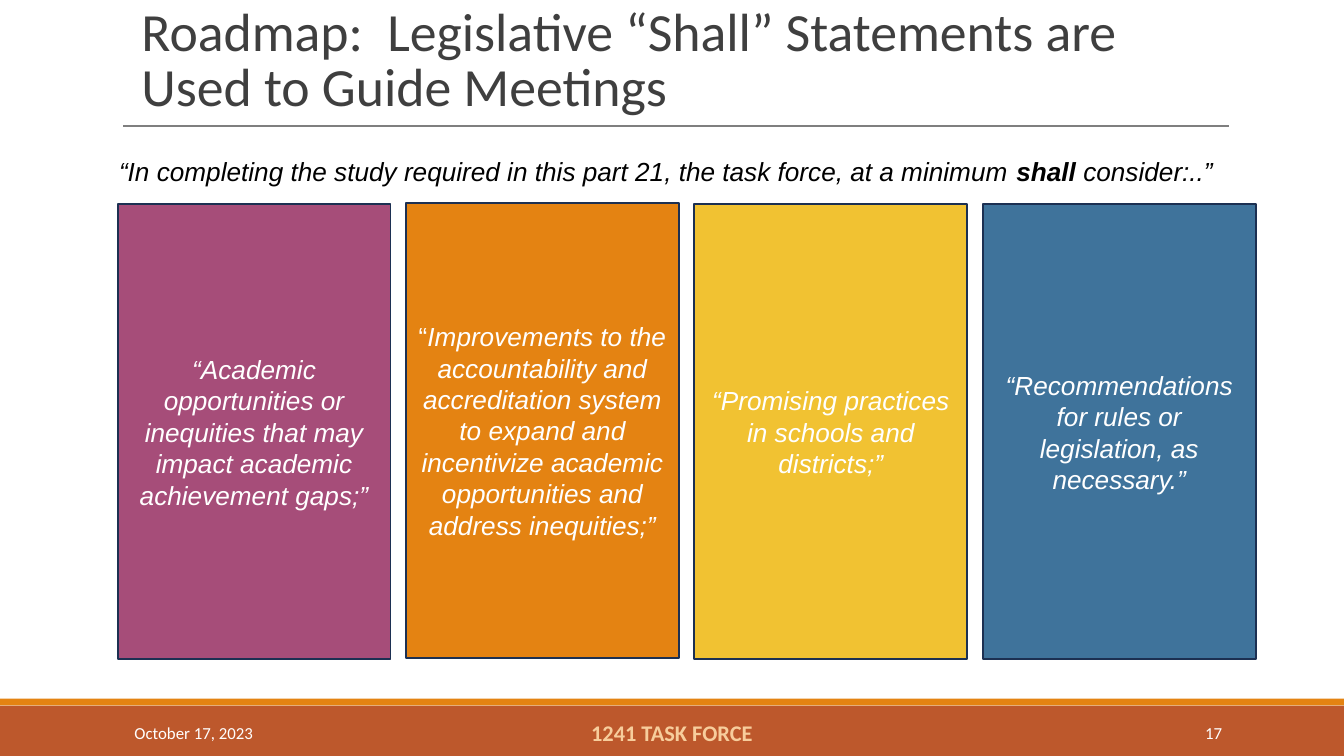
from lxml import etree
from pptx import Presentation
from pptx.dml.color import RGBColor
from pptx.enum.shapes import MSO_CONNECTOR, MSO_SHAPE
from pptx.enum.text import MSO_ANCHOR, MSO_AUTO_SIZE, PP_ALIGN
from pptx.oxml.ns import qn
from pptx.util import Emu, Pt

LEFT, CENTER, RIGHT = PP_ALIGN.LEFT, PP_ALIGN.CENTER, PP_ALIGN.RIGHT
TOP, MIDDLE, BOTTOM = MSO_ANCHOR.TOP, MSO_ANCHOR.MIDDLE, MSO_ANCHOR.BOTTOM
RECTANGLE = MSO_SHAPE.RECTANGLE
STRAIGHT = MSO_CONNECTOR.STRAIGHT
NO_AUTOFIT = MSO_AUTO_SIZE.NONE

WHITE = RGBColor(0xFF, 0xFF, 0xFF)
BLACK = RGBColor(0x00, 0x00, 0x00)
CHARCOAL = RGBColor(0x3F, 0x3F, 0x3F)
GRAY = RGBColor(0x7F, 0x7F, 0x7F)
NAVY = RGBColor(0x1C, 0x30, 0x52)
RUST = RGBColor(0xBD, 0x58, 0x2C)
ORANGE = RGBColor(0xE4, 0x83, 0x12)
PEACH = RGBColor(0xF7, 0xCD, 0x9C)
PLUM = RGBColor(0xA6, 0x4D, 0x79)
YELLOW = RGBColor(0xF1, 0xC2, 0x32)
BLUE = RGBColor(0x3F, 0x73, 0x9B)

PX = 9525  # EMU in one px, 96 px to the inch
SLIDE_WIDTH, SLIDE_HEIGHT = 960, 540
WIDE_INSETS = (10, 5)
NARROW_INSETS = (7, 4)

# Each card: fill, vertical nudge, spans of (text, italic)
CARDS = [
    (PLUM, 0, [("“Academic opportunities or inequities that may impact "
                "academic achievement gaps;”", True)]),
    (ORANGE, -1, [("“", False),
                  ("Improvements to the accountability and accreditation system "
                   "to expand and incentivize academic opportunities and "
                   "address inequities;”", True)]),
    (YELLOW, 0, [("“Promising practices in schools and districts;”", True)]),
    (BLUE, 0, [("“Recommendations for rules or legislation, as necessary.”", True)]),
]


def px(*lengths):
    return [Emu(length * PX) for length in lengths]


def write_text(shape, spans, font="Arial", size=14, color=BLACK, bold=False,
               italic=False, align=LEFT, anchor=TOP, insets=NARROW_INSETS,
               line_spacing=None):
    """Write one paragraph of (text, format overrides) spans into a shape."""
    frame = shape.text_frame
    frame.word_wrap = True
    frame.auto_size = NO_AUTOFIT
    frame.vertical_anchor = anchor
    frame.margin_left, frame.margin_top = px(*insets)
    frame.margin_right, frame.margin_bottom = px(*insets)
    para = frame.paragraphs[0]
    para.alignment = align
    if line_spacing:
        para.line_spacing = line_spacing
    for text, overrides in spans:
        span = para.add_run()
        span.text = text
        span.font.name = font
        span.font.size = Pt(size)
        span.font.color.rgb = color
        span.font.bold = overrides.get("bold", bold)
        span.font.italic = overrides.get("italic", italic)


def add_rectangle(page, box, fill, line=None):
    shape = page.shapes.add_shape(RECTANGLE, *px(*box))
    shape.shadow.inherit = False
    shape.fill.solid()
    shape.fill.fore_color.rgb = fill
    if line is None:
        shape.line.fill.background()
    else:
        shape.line.color.rgb = line
        shape.line.width = Pt(1)
    return shape


def add_heading(page, box):
    """Place the title, with a rule just below it."""
    left, top, width, height = box
    title = page.shapes.title
    title.left, title.top, title.width, title.height = px(*box)
    write_text(title, [("Roadmap:  Legislative “Shall” Statements are "
                        "Used to Guide Meetings", {})],
               font="Calibri", size=28.8, color=CHARCOAL, anchor=BOTTOM,
               insets=WIDE_INSETS, line_spacing=0.85)
    rule_y = top + height + 1
    rule = page.shapes.add_connector(
        STRAIGHT, *px(left - 3, rule_y, left + width - 5, rule_y))
    rule.line.color.rgb = GRAY
    rule.line.width = Pt(0.75)
    etree.SubElement(rule._element.spPr, qn("a:effectLst"))


def add_introduction(page, box):
    intro = page.shapes.add_textbox(*px(*box))
    write_text(intro, [
        ("“In completing the study required in this part 21, the task force, "
         "at a minimum ", {}),
        ("shall ", {"bold": True}),
        ("consider:..”", {}),
    ], italic=True)


def add_cards(page, box, gap):
    left, top, width, height = box
    card_width = (width - gap * (len(CARDS) - 1)) // len(CARDS)
    for index, (fill, nudge, spans) in enumerate(CARDS):
        card_left = left + index * (card_width + gap)
        card = add_rectangle(page, (card_left, top + nudge, card_width, height),
                             fill, NAVY)
        write_text(card, [(text, {"italic": italic}) for text, italic in spans],
                   color=WHITE, align=CENTER, anchor=MIDDLE)


def add_footer(page, box):
    """Draw the two-tone band with the date, group name and page number."""
    left, top, width, height = box
    stripe = 5
    add_rectangle(page, (left, top + stripe, width, height - stripe), RUST)
    add_rectangle(page, (left, top, width, stripe), ORANGE)
    entries = [
        ("October 17, 2023", 86, 195, LEFT, 9, WHITE, False),
        ("1241 TASK FORCE", 290, 380, CENTER, 12, PEACH, True),
        ("17", 780, 103, RIGHT, 9, WHITE, False),
    ]
    for text, offset, entry_width, align, size, color, bold in entries:
        entry = page.shapes.add_textbox(
            *px(left + offset, top + 10, entry_width, 29))
        write_text(entry, [(text, {})], font="Calibri", size=size, color=color,
                   bold=bold, align=align, anchor=MIDDLE, insets=WIDE_INSETS)


def main():
    deck = Presentation()
    deck.slide_width, deck.slide_height = px(SLIDE_WIDTH, SLIDE_HEIGHT)
    page = deck.slides.add_slide(deck.slide_layouts[5])
    add_footer(page, (0, 499, SLIDE_WIDTH, 41))
    add_heading(page, (91, 29, 792, 60))
    add_cards(page, (84, 146, 813, 325), gap=11)
    add_introduction(page, (78, 107, 804, 30))
    deck.save("out.pptx")


if __name__ == "__main__":
    main()
